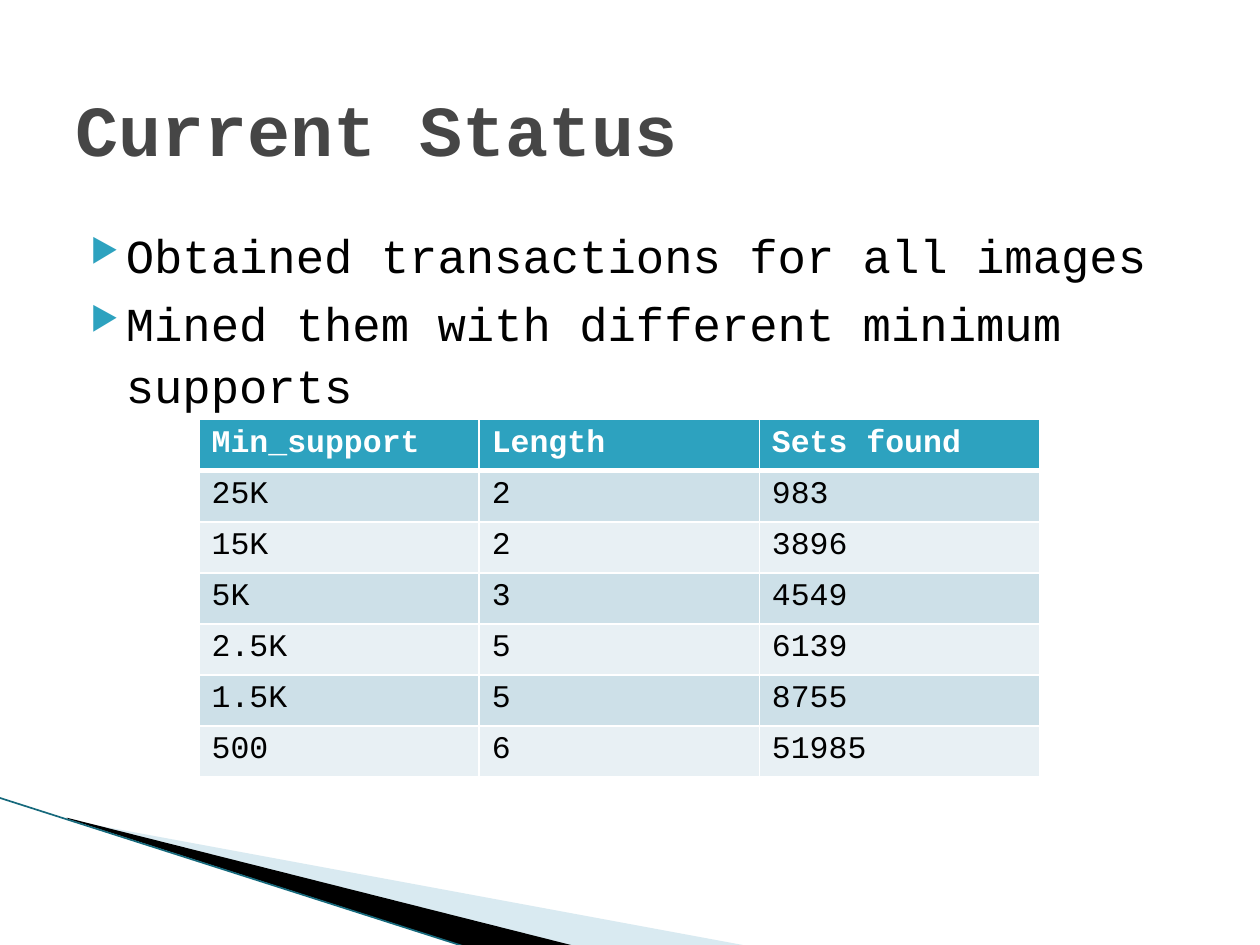
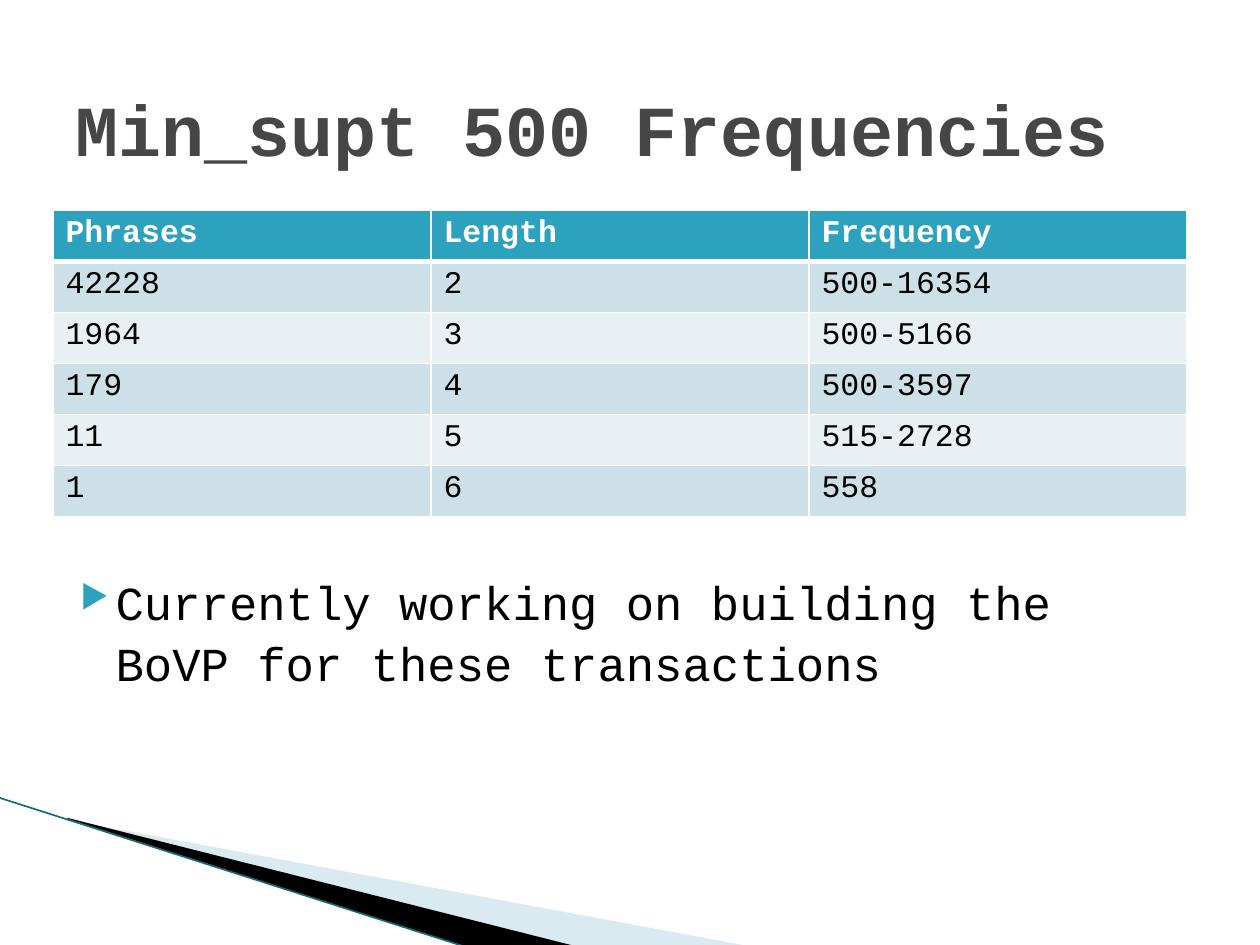
"""Build two status slides with tables on frequent set mining."""
from lxml.etree import SubElement
from pptx import Presentation
from pptx.dml.color import RGBColor
from pptx.enum.shapes import MSO_CONNECTOR
from pptx.enum.text import MSO_ANCHOR
from pptx.oxml.ns import qn
from pptx.util import Inches, Pt

FONT = "Courier New"
TEAL = "2DA2BF"
WHITE = "FFFFFF"
BLACK = "000000"
GREY = "464646"
BANDS = ["E8F0F4", "CDE0E8"]
WEDGES = [
    ("A0CBDC", 40, [(0.55, 6.51), (5.95, 7.51), (4.56, 7.51), (0.55, 6.5)]),
    (BLACK, 100, [(0.53, 6.49), (4.57, 7.51), (3.72, 7.52), (0.54, 6.5)]),
]
PAGES = [
    {
        "title": "Current Status",
        "body": (0.5, 1.62),
        "points": ["Obtained transactions for all images",
                   "Mined them with different minimum supports"],
        "grid": (1.58, 3.33, 6.67, 2.84),
        "rows": [("Min_support", "Length", "Sets found"),
                 ("25K", "2", "983"),
                 ("15K", "2", "3896"),
                 ("5K", "3", "4549"),
                 ("2.5K", "5", "6139"),
                 ("1.5K", "5", "8755"),
                 ("500", "6", "51985")],
    },
    {
        "title": "Min_supt 500 Frequencies",
        "body": (0.42, 4.37),
        "points": ["Currently working on building the BoVP for these transactions"],
        "grid": (0.42, 1.67, 9, 2.43),
        "rows": [("Phrases", "Length", "Frequency"),
                 ("42228", "2", "500-16354"),
                 ("1964", "3", "500-5166"),
                 ("179", "4", "500-3597"),
                 ("11", "5", "515-2728"),
                 ("1", "6", "558")],
    },
]


def paint(fill, tone):
    """Give a fill one solid colour."""
    fill.solid()
    fill.fore_color.rgb = RGBColor.from_string(tone)


def style(frame, size, tone, bold=False):
    """Format every run in a text frame."""
    for para in frame.paragraphs:
        for run in para.runs:
            run.font.name = FONT
            run.font.size = Pt(size)
            run.font.bold = bold
            paint(run.font.fill, tone)


deck = Presentation()
deck.slide_width = Inches(10)
deck.slide_height = Inches(7.5)

for page in PAGES:
    slide = deck.slides.add_slide(deck.slide_layouts[6])
    paint(slide.background.fill, WHITE)
    shapes = slide.shapes

    for tone, alpha, spots in WEDGES:
        spots = [(Inches(x), Inches(y)) for x, y in spots]
        pen = shapes.build_freeform(*spots[0])
        pen.add_line_segments(spots[1:], close=True)
        wedge = pen.convert_to_shape()
        wedge.shadow.inherit = False
        wedge.line.fill.background()
        paint(wedge.fill, tone)
        if alpha < 100:
            shade = wedge.fill._xPr.find(".//" + qn("a:srgbClr"))
            SubElement(shade, qn("a:alpha"), val=str(alpha * 1000))

    edge = shapes.add_connector(MSO_CONNECTOR.STRAIGHT, Inches(-0.01),
                                Inches(6.33), Inches(3.71), Inches(7.52))
    edge.line.width = Pt(0.95)
    paint(edge.line.fill, "16697C")
    SubElement(edge._element.spPr, qn("a:effectLst"))

    left, top = page["body"]
    body = shapes.add_textbox(Inches(left), Inches(top), Inches(9), Inches(2.05))
    frame = body.text_frame
    frame.word_wrap = True
    frame.margin_top = Inches(0.14)
    frame.text = "\n".join(page["points"])
    for rank, para in enumerate(frame.paragraphs):
        props = para._p.get_or_add_pPr()
        props.set("marL", str(Inches(0.4)))
        props.set("indent", str(Inches(-0.28)))
        SubElement(SubElement(props, qn("a:buClr")), qn("a:srgbClr"), val=TEAL)
        SubElement(props, qn("a:buSzPct"), val="68000")
        SubElement(props, qn("a:buChar"), char="▶")
        para.line_spacing = 1.08
        if rank:
            para.space_before = Pt(4)
    style(frame, 27, BLACK)

    title = shapes.add_textbox(Inches(0.5), Inches(0.3), Inches(9), Inches(1.25))
    frame = title.text_frame
    frame.word_wrap = True
    frame.margin_top = Inches(0.23)
    frame.vertical_anchor = MSO_ANCHOR.MIDDLE
    frame.text = page["title"]
    style(frame, 41, GREY, True)

    rows = page["rows"]
    place = [Inches(n) for n in page["grid"]]
    table = shapes.add_table(len(rows), len(rows[0]), *place).table
    for r, row in enumerate(rows):
        head = r == 0
        for c, word in enumerate(row):
            cell = table.cell(r, c)
            cell.text = word
            style(cell.text_frame, 18, WHITE if head else BLACK, head)
            props = cell._tc.get_or_add_tcPr()
            for side in "LRTB":
                thick = (r, side) in [(0, "B"), (1, "T")]
                rule = SubElement(props, qn("a:ln" + side), w=str(Pt(3 if thick else 1)))
                ink = SubElement(rule, qn("a:solidFill"))
                SubElement(ink, qn("a:srgbClr"), val=WHITE)
            paint(cell.fill, TEAL if head else BANDS[r % 2])

deck.save("out.pptx")
